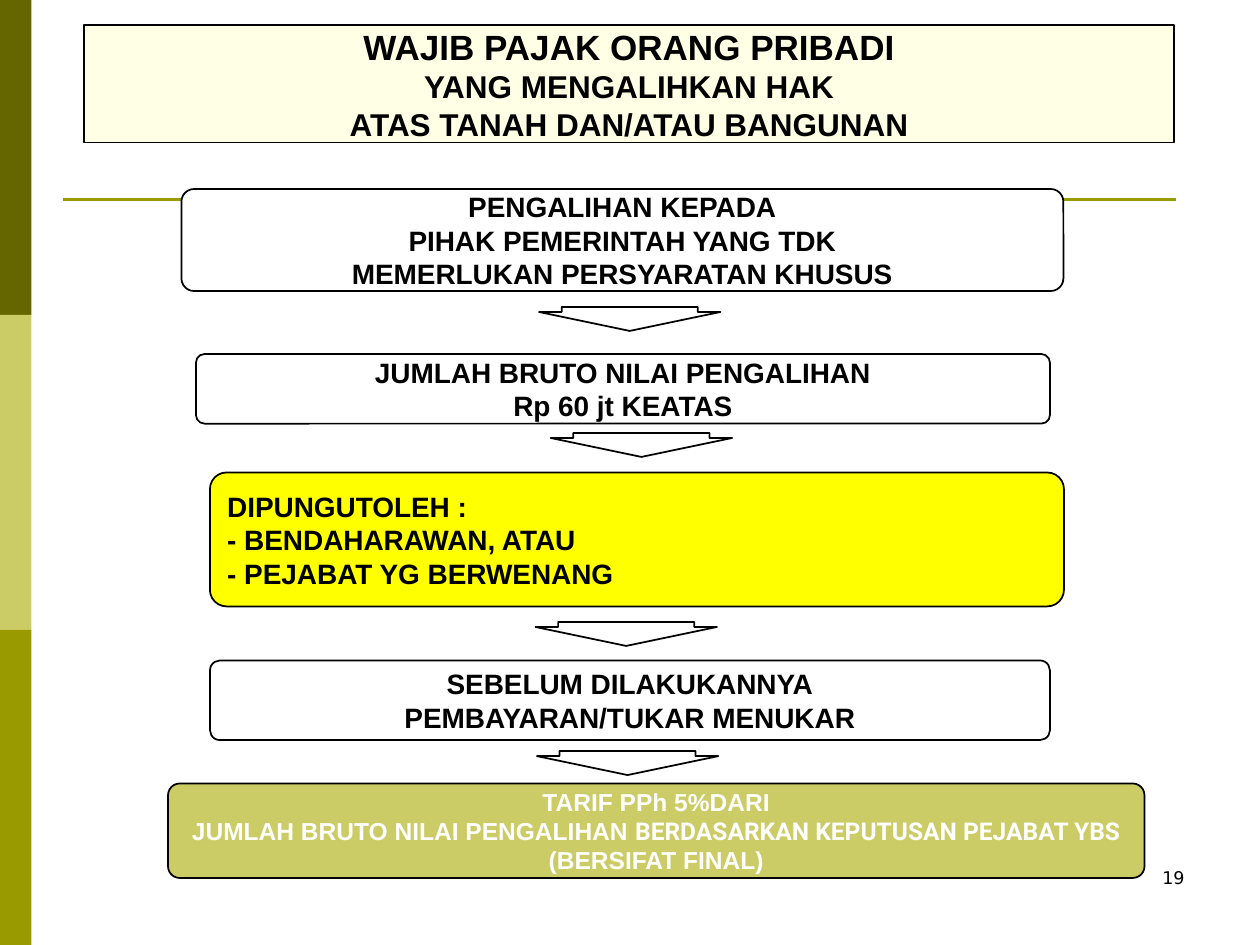
from dataclasses import dataclass

from pptx import Presentation
from pptx.dml.color import RGBColor
from pptx.enum.shapes import MSO_CONNECTOR, MSO_SHAPE
from pptx.enum.text import MSO_ANCHOR, MSO_AUTO_SIZE, PP_ALIGN
from pptx.oxml.ns import qn
from pptx.util import Pt

RECT = MSO_SHAPE.RECTANGLE
ROUNDED = MSO_SHAPE.ROUNDED_RECTANGLE
DOWN_ARROW = MSO_SHAPE.DOWN_ARROW
STRAIGHT = MSO_CONNECTOR.STRAIGHT
LEFT, CENTER, RIGHT = PP_ALIGN.LEFT, PP_ALIGN.CENTER, PP_ALIGN.RIGHT
MIDDLE = MSO_ANCHOR.MIDDLE
NO_AUTOFIT = MSO_AUTO_SIZE.NONE


@dataclass(frozen=True)
class Theme:
    black: str = "000000"
    white: str = "FFFFFF"
    cream: str = "FFFFE5"
    yellow: str = "FFFF00"
    dark_olive: str = "666600"
    olive: str = "999900"
    pale_olive: str = "CCCC66"
    font: str = "Arial"
    accent_font: str = "Roboto"
    number_font: str = "DejaVu Sans"
    title_size: float = 20
    subtitle_size: float = 18
    step_size: float = 16
    tariff_size: float = 14
    number_size: float = 10


THEME = Theme()


@dataclass(frozen=True)
class Step:
    left: float
    top: float
    width: float
    height: float
    lines: tuple[str, ...]
    fill: str = THEME.white
    color: str = THEME.black
    size: float = THEME.step_size
    align: PP_ALIGN = CENTER


@dataclass(frozen=True)
class Arrow:
    left: float
    top: float
    width: float = 103.7
    height: float = 13.7


STEPS = (
    Step(103.7, 108, 504, 58.3,
         ("PENGALIHAN KEPADA", "PIHAK PEMERINTAH YANG TDK",
          "MEMERLUKAN PERSYARATAN KHUSUS")),
    Step(112, 202.3, 488, 39.8,
         ("JUMLAH BRUTO NILAI PENGALIHAN", "Rp 60 jt KEATAS")),
    Step(120, 270, 488, 76.5,
         ("DIPUNGUTOLEH :", "- BENDAHARAWAN, ATAU", "- PEJABAT YG BERWENANG"),
         fill=THEME.yellow, align=LEFT),
    Step(120, 377.4, 480, 45.5,
         ("SEBELUM DILAKUKANNYA", "PEMBAYARAN/TUKAR MENUKAR")),
    Step(96, 447.7, 558, 54,
         ("TARIF PPh 5%DARI", "JUMLAH BRUTO NILAI PENGALIHAN ",
          "(BERSIFAT FINAL)"),
         fill=THEME.pale_olive, color=THEME.white, size=THEME.tariff_size),
)
ARROWS = (Arrow(308, 175.4), Arrow(314.7, 247.4),
          Arrow(306, 355.4), Arrow(306.8, 429.2))


def rgb(color: str) -> RGBColor:
    return RGBColor.from_string(color)


def paint(shape, fill: str, outline: str | None = THEME.black) -> None:
    shape.fill.solid()
    shape.fill.fore_color.rgb = rgb(fill)
    if outline:
        shape.line.color.rgb = rgb(outline)
        shape.line.width = Pt(1)
    else:
        shape.line.fill.background()


def add_box(slide, kind, left: float, top: float, width: float, height: float,
            fill: str, outline: str | None = THEME.black):
    box = slide.shapes.add_shape(kind, Pt(left), Pt(top), Pt(width), Pt(height))
    box.shadow.inherit = False
    paint(box, fill, outline)
    return box


def write_lines(frame, lines: tuple[str, ...], size: float, color: str = THEME.black,
                align: PP_ALIGN = CENTER, font: str = THEME.font,
                bold: bool = True) -> None:
    frame.word_wrap = True
    frame.auto_size = NO_AUTOFIT
    frame.text = "\n".join(lines)
    for paragraph in frame.paragraphs:
        paragraph.alignment = align
        paragraph.font.name = font
        paragraph.font.size = Pt(size)
        paragraph.font.bold = bold
        paragraph.font.color.rgb = rgb(color)


def add_step(slide, step: Step):
    box = add_box(slide, ROUNDED, step.left, step.top, step.width, step.height, step.fill)
    box.adjustments[0] = 0.124
    box.text_frame.vertical_anchor = MIDDLE
    write_lines(box.text_frame, step.lines, step.size, step.color, step.align)
    return box


def add_arrow(slide, arrow: Arrow) -> None:
    shape = add_box(slide, DOWN_ARROW, arrow.left, arrow.top,
                    arrow.width, arrow.height, THEME.white)
    shape.adjustments[0] = 0.75
    shape.adjustments[1] = 0.79


def add_backdrop(slide) -> None:
    band_height = 180
    for row, color in enumerate((THEME.dark_olive, THEME.pale_olive, THEME.olive)):
        add_box(slide, RECT, 0, row * band_height, 18, band_height, color, None)
    rule = slide.shapes.add_connector(STRAIGHT, Pt(36), Pt(114), Pt(672), Pt(114))
    rule.line.color.rgb = rgb(THEME.olive)
    rule.line.width = Pt(1.5)
    properties = rule._element.spPr
    properties.append(properties.makeelement(qn("a:effectLst"), {}))


def add_title(slide) -> None:
    title = slide.shapes.title
    title.left, title.top, title.width, title.height = Pt(48), Pt(14.4), Pt(623), Pt(67)
    paint(title, THEME.cream)
    title.text_frame.vertical_anchor = MIDDLE
    write_lines(title.text_frame,
                ("WAJIB PAJAK ORANG PRIBADI", "YANG MENGALIHKAN HAK",
                 "ATAS TANAH DAN/ATAU BANGUNAN"), THEME.subtitle_size)
    title.text_frame.paragraphs[0].font.size = Pt(THEME.title_size)


def main() -> None:
    deck = Presentation()
    deck.slide_width, deck.slide_height = Pt(720), Pt(540)
    slide = deck.slides.add_slide(deck.slide_layouts[5])

    # Side bands, rule and heading
    add_backdrop(slide)
    add_title(slide)

    # Flow of steps, ending with the tariff
    *_, tariff = [add_step(slide, step) for step in STEPS]
    basis = tariff.text_frame.paragraphs[1].add_run()
    basis.text = "BERDASARKAN KEPUTUSAN PEJABAT YBS"
    basis.font.name = THEME.accent_font
    for arrow in ARROWS:
        add_arrow(slide, arrow)

    # Page number
    number = slide.shapes.add_textbox(Pt(516), Pt(492), Pt(168), Pt(36))
    write_lines(number.text_frame, ("19",), THEME.number_size, align=RIGHT,
                font=THEME.number_font, bold=False)

    deck.save("out.pptx")


if __name__ == "__main__":
    main()
